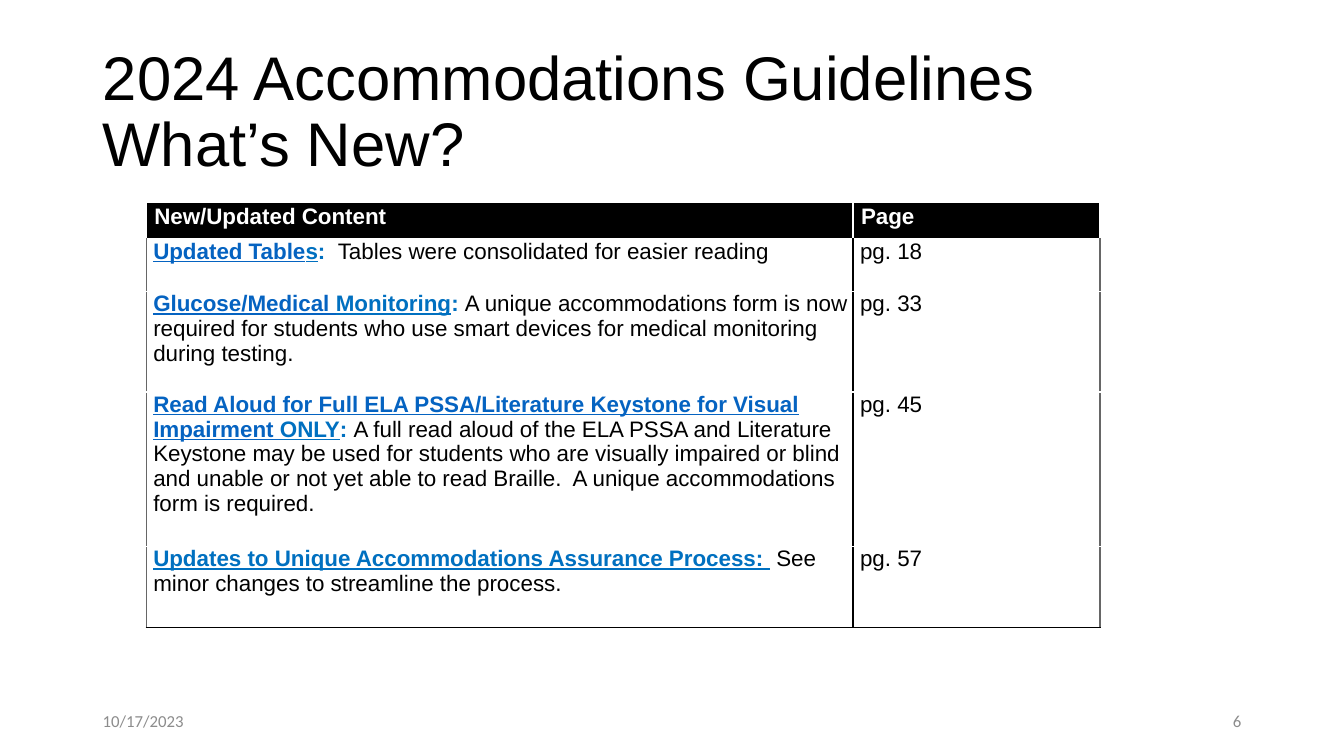
import dataclasses

import lxml.etree
import pptx
import pptx.dml.color
import pptx.enum.text
import pptx.oxml.ns
import pptx.util


@dataclasses.dataclass
class Theme:
    black: str = "000000"
    white: str = "FFFFFF"
    link: str = "0563C1"
    accent: str = "0070C0"
    side_border: str = "666666"
    footer: str = "8C8C8C"
    title_size: int = 44
    table_size: int = 16
    footer_size: int = 12


theme = Theme()
inch = pptx.util.Inches
anchors = pptx.enum.text.MSO_ANCHOR
aligns = pptx.enum.text.PP_ALIGN


def write(frame, text, size, color=theme.black, font="Arial", bold=False,
          underline=False, align=aligns.LEFT, spacing=None, indent=0):
    """Append text to the first paragraph; a newline becomes a line break."""
    paragraph = frame.paragraphs[0]
    paragraph.alignment = align
    if spacing:
        paragraph.line_spacing = spacing
    if indent:
        properties = paragraph._p.get_or_add_pPr()
        properties.set("marL", str(inch(indent)))
        properties.set("indent", "0")
    for number, line in enumerate(text.split("\n")):
        if number:
            paragraph.add_line_break()
        run = paragraph.add_run()
        run.text = line
        run.font.name = font
        run.font.size = pptx.util.Pt(size)
        run.font.bold = bold
        run.font.underline = underline
        run.font.color.rgb = pptx.dml.color.RGBColor.from_string(color)


def add_borders(cell, colors):
    """Draw one-point borders, given in the order left, right, bottom."""
    properties = cell._tc.get_or_add_tcPr()
    for position, (side, color) in enumerate(colors.items()):
        line = lxml.etree.Element(pptx.oxml.ns.qn("a:" + side), w="12700")
        fill = lxml.etree.SubElement(line, pptx.oxml.ns.qn("a:solidFill"))
        lxml.etree.SubElement(fill, pptx.oxml.ns.qn("a:srgbClr"), val=color)
        properties.insert(position, line)


deck = pptx.Presentation()
deck.slide_width = inch(13.33)
deck.slide_height = inch(7.5)
slide = deck.slides.add_slide(deck.slide_layouts[5])
margin = 0.92

# Title
title = slide.shapes.title
title.left, title.top = inch(margin), inch(0.4)
title.width, title.height = inch(11.5), inch(1.45)
title.text_frame.vertical_anchor = anchors.MIDDLE
title.text_frame.word_wrap = True
write(title.text_frame, "2024 Accommodations Guidelines\nWhat’s New?",
      theme.title_size, spacing=0.9)

# Table content: linked words, accented words, closing mark, description, page
headings = ["New/Updated Content", "Page"]
updates = [
    ("Updated Table", "s", ":  ",
     "Tables were consolidated for easier reading", "pg. 18"),
    ("Glucose/Medical ", "Monitoring", ": ",
     "A unique accommodations form is now required for students who use "
     "smart devices for medical monitoring during testing.", "pg. 33"),
    ("Read Aloud for Full ELA PSSA/Literature Keystone for Visual Impairment ",
     "ONLY", ": ",
     "A full read aloud of the ELA PSSA and Literature Keystone may be used "
     "for students who are visually impaired or blind and unable or not yet "
     "able to read Braille.  A unique accommodations form is required.",
     "pg. 45"),
    ("", "Updates to Unique Accommodations Assurance Process: ", " ",
     "See minor changes to streamline the process.", "pg. 57"),
]
column_widths = [7.01, 2.45]
row_heights = [0.36, 0.52, 1, 1.53, 0.81]

# Table grid
guidelines = slide.shapes.add_table(
    len(row_heights), len(column_widths), inch(1.45), inch(2.01),
    inch(sum(column_widths)), inch(sum(row_heights))).table
guidelines.horz_banding = False
for column, width in zip(guidelines.columns, column_widths):
    column.width = inch(width)
for row, height in zip(guidelines.rows, row_heights):
    row.height = inch(height)
for cell in guidelines.iter_cells():
    cell.margin_left = cell.margin_right = 0
    cell.margin_top = cell.margin_bottom = 0

# Header row
for cell, heading in zip(guidelines.rows[0].cells, headings):
    cell.fill.solid()
    cell.fill.fore_color.rgb = pptx.dml.color.RGBColor.from_string(theme.black)
    cell.vertical_anchor = anchors.MIDDLE
    write(cell.text_frame, heading, theme.table_size, theme.white, bold=True,
          spacing=pptx.util.Pt(12.2), indent=0.08)

# Update rows
for number, (linked, accented, mark, description, page) in enumerate(updates, 1):
    content, page_cell = guidelines.rows[number].cells
    pieces = [
        (linked, theme.link, True, True),
        (accented, theme.accent, True, True),
        (mark, theme.accent, True, False),
        (description, theme.black, False, False),
    ]
    for text, color, bold, underline in pieces:
        if text:
            write(content.text_frame, text, theme.table_size, color,
                  bold=bold, underline=underline, indent=0.07)
    write(page_cell.text_frame, page, theme.table_size, indent=0.07)
    for cell, left, right in ((content, theme.side_border, theme.black),
                              (page_cell, theme.black, theme.side_border)):
        cell.fill.background()
        add_borders(cell, {"lnL": left, "lnR": right, "lnB": theme.black})

# Date and page number
for text, left, align in (("10/17/2023", margin, aligns.LEFT),
                          ("6", 13.33 - margin - 3, aligns.RIGHT)):
    footer = slide.shapes.add_textbox(inch(left), inch(6.95), inch(3), inch(0.4))
    footer.text_frame.word_wrap = True
    footer.text_frame.vertical_anchor = anchors.MIDDLE
    write(footer.text_frame, text, theme.footer_size, theme.footer,
          font="Calibri", align=align)

deck.save("out.pptx")
